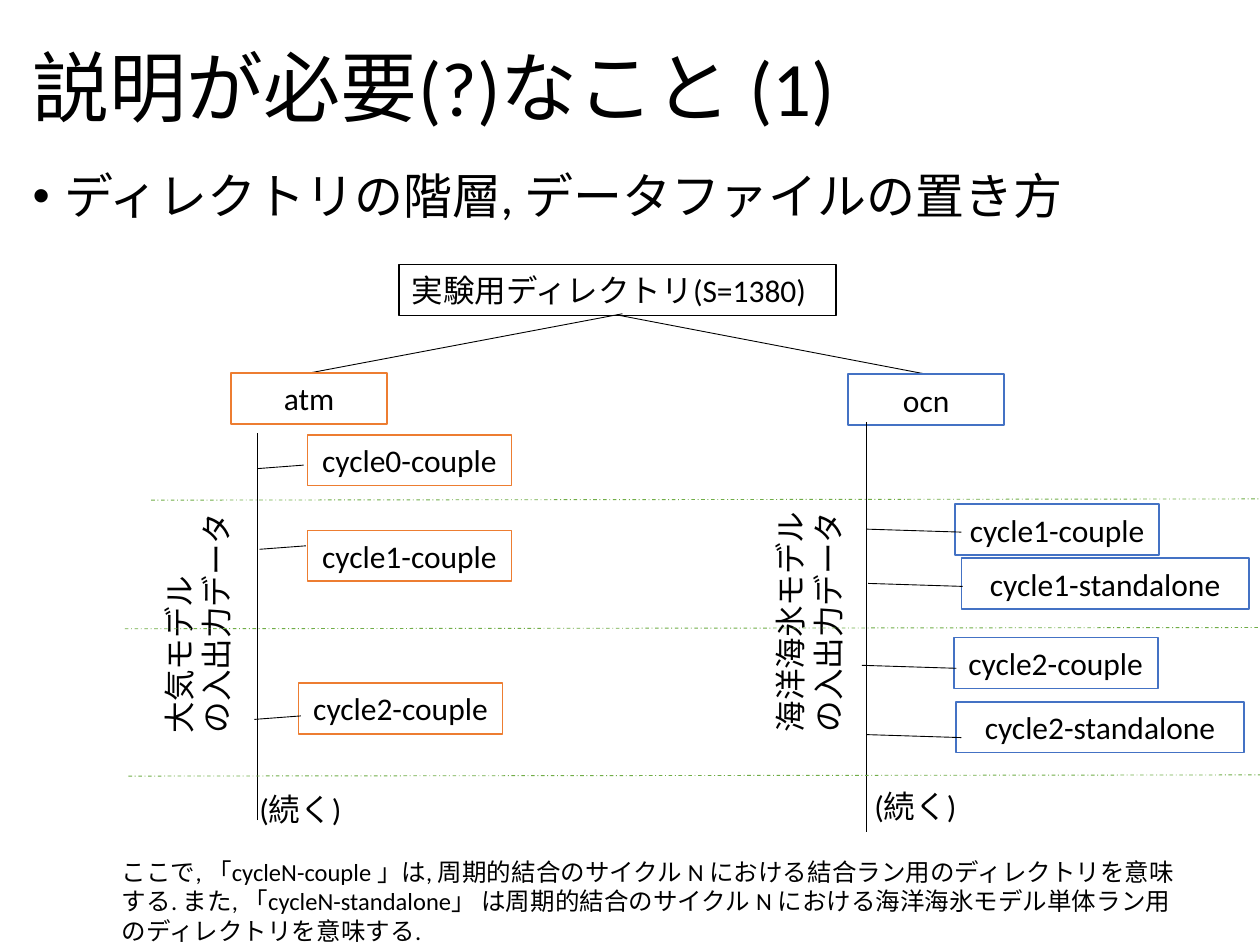
"""Build a slide that explains the directory tree of a coupled model run."""
from lxml import etree
from pptx import Presentation
from pptx.dml.color import RGBColor
from pptx.enum import dml, shapes, text
from pptx.oxml import ns
from pptx.util import Pt

COLOURS = {"ink": "000000", "paper": "FFFFFF", "atm": "ED7D31",
           "ocn": "4472C4", "divider": "70AD47"}
FONT = "Calibri"
NODE_HEIGHT = 29.1
COUPLE, STANDALONE = 116.6, 164.2

BRANCHES = [
    {"name": "atm", "origin": (132, 213), "trunk": (15, 34.7, 255.7),
     "label": ["大気モデル", "の入出力データ"], "label_at": (-94, 112.4),
     "more_at": (9.1, 234.8), "twig": (26.5, -2),
     "leaves": [("cycle0-couple", COUPLE, (43.7, 35.4), (15, 54.8)),
                ("cycle1-couple", COUPLE, (43.7, 90.1), (16.3, 100.9)),
                ("cycle2-couple", COUPLE, (38.6, 177.2), (13.4, 198.1))]},
    {"name": "ocn", "origin": (484.6, 213.8), "trunk": (10.8, 27.4, 261.4),
     "label": ["海洋海氷モデル", "の入出力データ"], "label_at": (-97.2, 110.9),
     "more_at": (7.9, 232.6), "twig": (54, 1.7),
     "leaves": [("cycle1-couple", COUPLE, (61.2, 74.2), (10.8, 88.6)),
                ("cycle1-standalone", STANDALONE, (64.8, 105.2), (11.5, 119.6)),
                ("cycle2-couple", COUPLE, (60.4, 150.5), (7.9, 166.4)),
                ("cycle2-standalone", STANDALONE, (61.9, 187.2), (10.8, 206))]},
]


def colour(name):
    """Return the named colour."""
    return RGBColor.from_string(COLOURS[name])


def write(box, lines, size, align=text.PP_ALIGN.LEFT):
    """Write one paragraph for each line into the box."""
    frame = box.text_frame
    frame.text = "\n".join(lines)
    for para in frame.paragraphs:
        para.alignment = align
        para.font.size = Pt(size)
        para.font.name = FONT
        para.font.color.rgb = colour("ink")


def add_label(page, left, top, width, height, lines, size=18):
    """Add a wrapping text box."""
    box = page.shapes.add_textbox(Pt(left), Pt(top), Pt(width), Pt(height))
    box.text_frame.word_wrap = True
    write(box, lines, size)
    return box


def add_node(page, left, top, width, name, outline, align=text.PP_ALIGN.CENTER):
    """Add an outlined directory box."""
    box = page.shapes.add_shape(shapes.MSO_SHAPE.RECTANGLE, Pt(left), Pt(top),
                                Pt(width), Pt(NODE_HEIGHT))
    box.shadow.inherit = False
    box.fill.solid()
    box.fill.fore_color.rgb = colour("paper")
    box.line.color.rgb = colour(outline)
    box.line.width = Pt(1)
    box.text_frame.word_wrap = align == text.PP_ALIGN.LEFT
    write(box, [name], 18, align)


def add_line(page, left, top, right, bottom, stroke="ink", dash=None):
    """Add a thin straight line without a shadow."""
    line = page.shapes.add_connector(shapes.MSO_CONNECTOR.STRAIGHT, Pt(left),
                                     Pt(top), Pt(right), Pt(bottom))
    line.line.color.rgb = colour(stroke)
    line.line.width = Pt(0.5)
    if dash:
        line.line.dash_style = dash
    etree.SubElement(line._element.spPr, ns.qn("a:effectLst"))


def add_heading(page, left, top, width):
    """Place the title and the bullet below it."""
    title = page.shapes.title
    title.left, title.top = Pt(left), Pt(top)
    title.width, title.height = Pt(width), Pt(104.4)
    write(title, ["説明が必要(?)なこと (1)"], 44)
    title.text_frame.auto_size = text.MSO_AUTO_SIZE.NONE
    title.text_frame.vertical_anchor = text.MSO_ANCHOR.MIDDLE
    title.text_frame.paragraphs[0].line_spacing = 0.9

    body = add_label(page, left, top + 51.8, 699, 466.6,
                     ["ディレクトリの階層, データファイルの置き方"], 28)
    body.text_frame.margin_top = Pt(43)
    props = body.text_frame.paragraphs[0]._p.get_or_add_pPr()
    props.set("marL", str(Pt(18)))
    props.set("indent", str(-Pt(18)))
    etree.SubElement(props, ns.qn("a:buFont")).set("typeface", "Arial")
    bullet = etree.SubElement(props, ns.qn("a:buChar"))
    bullet.set("char", "•")
    props.remove(bullet)
    defaults = props.find(ns.qn("a:defRPr"))
    font = props.find(ns.qn("a:buFont"))
    props.remove(font)
    for item in (font, bullet):
        defaults.addprevious(item)


def add_root(page, left, top):
    """Add the top directory and its lines to both branches."""
    add_node(page, left, top, 249.8, "実験用ディレクトリ(S=1380)", "ink",
             text.PP_ALIGN.LEFT)
    add_line(page, left + 127.5, top + 28.1, left - 51.1, top + 61.9)
    add_line(page, left + 124.6, top + 28.8, left + 301, top + 62.6)


def add_branch(page, branch):
    """Add one model's directory, trunk, leaves and labels."""
    left, top = branch["origin"]
    add_node(page, left, top, 89.3, branch["name"], branch["name"])
    trunk, start, end = branch["trunk"]
    add_line(page, left + trunk, top + end, left + trunk, top + start)
    across, down = branch["twig"]
    for name, width, (leaf_x, leaf_y), (twig_x, twig_y) in branch["leaves"]:
        add_node(page, left + leaf_x, top + leaf_y, width, name, branch["name"])
        add_line(page, left + twig_x, top + twig_y,
                 left + twig_x + across, top + twig_y + down)
    label_x, label_y = branch["label_at"]
    label = add_label(page, left + label_x, top + label_y, 150.5, 51.1,
                      branch["label"])
    label.rotation = 270
    more_x, more_y = branch["more_at"]
    add_label(page, left + more_x, top + more_y, 87.1, NODE_HEIGHT, ["(続く)"])


def add_dividers(page):
    """Add the dashed lines between cycles."""
    for left, top in ((86.4, 285.8), (71.3, 359.3), (73.4, 443.5)):
        add_line(page, left, top, left + 648.7, top - 0.7, "divider",
                 dml.MSO_LINE.DASH_DOT)


def main():
    """Build and save the deck."""
    deck = Presentation()
    deck.slide_width, deck.slide_height = Pt(720), Pt(540)
    page = deck.slides.add_slide(deck.slide_layouts[5])
    add_heading(page, 11.5, 0, 620.6)
    add_root(page, 228.2, 151.2)
    for branch in BRANCHES:
        add_branch(page, branch)
    add_dividers(page)
    add_label(page, 62.6, 486, 619.2, 58.3, [
        "ここで, 「cycleN-couple 」は, 周期的結合のサイクル N における結合ラン用の"
        "ディレクトリを意味する. また, 「cycleN-standalone」 は周期的結合のサイクル N "
        "における海洋海氷モデル単体ラン用のディレクトリを意味する."], 14)
    deck.save("out.pptx")


if __name__ == "__main__":
    main()
